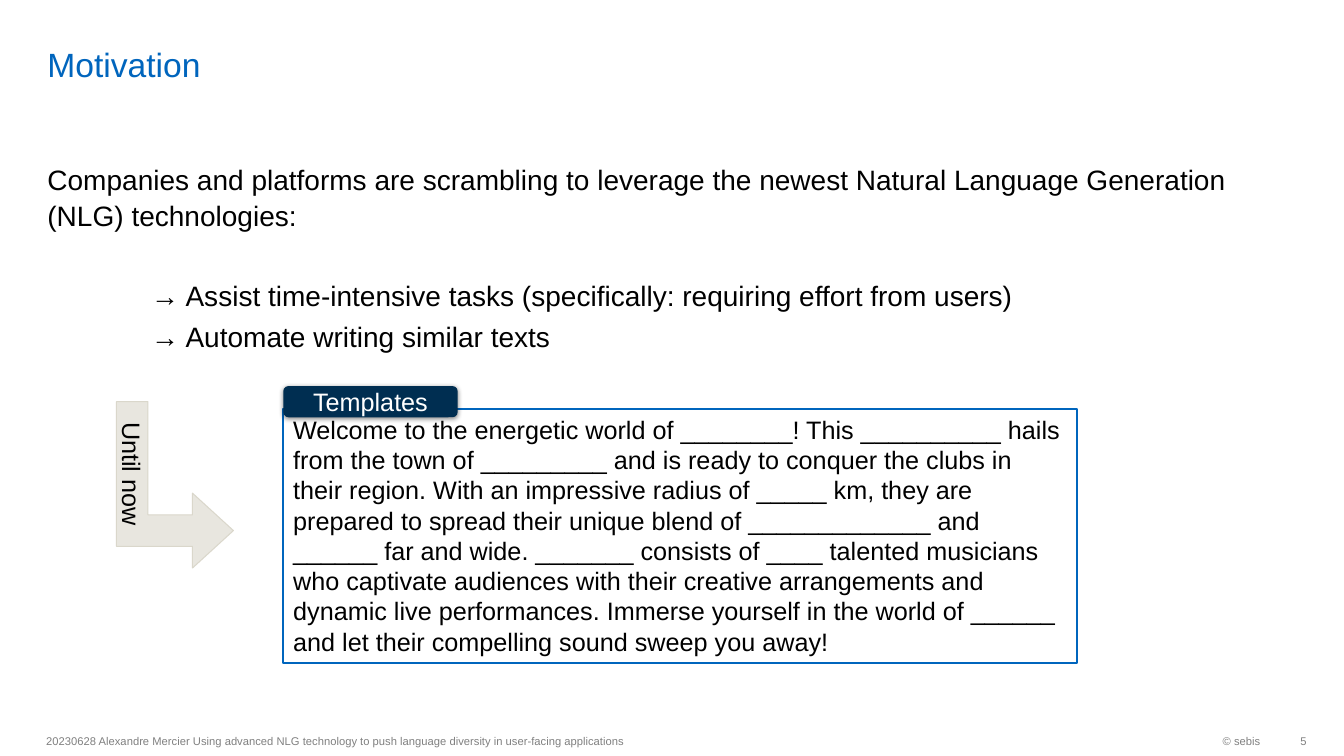
from lxml import etree
from pptx import Presentation
from pptx.dml.color import RGBColor
from pptx.enum.shapes import MSO_SHAPE
from pptx.enum.text import MSO_ANCHOR, MSO_AUTO_SIZE, PP_ALIGN
from pptx.oxml.ns import qn
from pptx.util import Inches, Pt

LEFT, CENTER, RIGHT = PP_ALIGN.LEFT, PP_ALIGN.CENTER, PP_ALIGN.RIGHT
TOP, MIDDLE, BOTTOM = MSO_ANCHOR.TOP, MSO_ANCHOR.MIDDLE, MSO_ANCHOR.BOTTOM
NO_AUTOFIT = MSO_AUTO_SIZE.NONE

TITLE = "Motivation"
# text, left indent in inches, space before in points
BODY = [
    ("Companies and platforms are scrambling to leverage the newest "
     "Natural Language Generation (NLG) technologies:", 0, 0),
    ("→ Assist time-intensive tasks (specifically: requiring effort from users)", 1.03, 32),
    ("→ Automate writing similar texts", 1.03, 4),
]
ARROW_LABEL = "Until now"
TEMPLATE_LABEL = "Templates"
TEMPLATE_TEXT = (
    "Welcome to the energetic world of ________! This __________ hails from the "
    "town of _________ and is ready to conquer the clubs in their region. With an "
    "impressive radius of _____ km, they are prepared to spread their unique blend "
    "of _____________ and ______ far and wide. _______ consists of ____ talented "
    "musicians who captivate audiences with their creative arrangements and dynamic "
    "live performances. Immerse yourself in the world of ______ and let their "
    "compelling sound sweep you away!"
)
WIDTH, HEIGHT = 13.33, 7.5
MARGIN = 0.37
FOOTER_TOP, FOOTER_HEIGHT = 7.19, 0.32
NUMBER_LEFT = WIDTH - 2 * MARGIN + 0.01
# text, left, width, alignment, right inset
FOOTERS = [
    ("20230628 Alexandre Mercier Using advanced NLG technology to push language "
     "diversity in user-facing applications", MARGIN - 0.01, 6.3, LEFT, 0.1),
    ("© sebis", NUMBER_LEFT - 2.34, 2.34, RIGHT, 0.1),
    ("5", NUMBER_LEFT, 0.36, RIGHT, 0),
]
BLUE, NAVY, BLACK, WHITE, GRAY = "0065BD", "002E51", "000000", "FFFFFF", "808080"
SAND, SAND_EDGE = "E8E6DF", "DAD7CB"


def color(value):
    return RGBColor.from_string(value)


def place(shape, left, top, width, height):
    shape.left, shape.top = Inches(left), Inches(top)
    shape.width, shape.height = Inches(width), Inches(height)


def write(shape, text, size, ink, align=LEFT, anchor=MIDDLE):
    """Put text in the shape and format each of its paragraphs."""
    frame = shape.text_frame
    frame.text = text
    frame.word_wrap = True
    frame.auto_size = NO_AUTOFIT
    frame.vertical_anchor = anchor
    for para in frame.paragraphs:
        para.alignment = align
        for span in para.runs:
            span.font.name = "Arial"
            span.font.size = Pt(size)
            span.font.color.rgb = color(ink)
    return frame


def add_box(slide, preset, bounds, fill=None, edge=None, edge_width=0.75):
    box = slide.shapes.add_shape(preset, 0, 0, 0, 0)
    place(box, *bounds)
    box.shadow.inherit = False
    if fill:
        box.fill.solid()
        box.fill.fore_color.rgb = color(fill)
    else:
        box.fill.background()
    if edge:
        box.line.color.rgb = color(edge)
        box.line.width = Pt(edge_width)
    else:
        box.line.fill.background()
    return box


def add_drop_shadow(shape, blur, distance, opacity):
    effects = shape._element.spPr.find(qn("a:effectLst"))
    shadow = etree.SubElement(
        effects, qn("a:outerShdw"), blurRad=str(Pt(blur)), dist=str(Pt(distance)),
        dir="5400000", rotWithShape="0")
    ink = etree.SubElement(shadow, qn("a:srgbClr"), val=BLACK)
    etree.SubElement(ink, qn("a:alpha"), val=str(opacity * 1000))


def add_body(slide):
    body = slide.placeholders[1]
    place(body, MARGIN, 1.55, WIDTH - 2 * MARGIN, 1.97)
    frame = write(body, "\n".join(text for text, _, _ in BODY), 20, BLACK, anchor=TOP)
    for para, (_, indent, before) in zip(frame.paragraphs, BODY):
        properties = para._p.get_or_add_pPr()
        properties.set("marL", str(Inches(indent)))
        properties.set("indent", "0")
        etree.SubElement(properties, qn("a:buNone"))
        para.line_spacing = 1.05
        para.space_before = Pt(before)


def main():
    deck = Presentation()
    deck.slide_width, deck.slide_height = Inches(WIDTH), Inches(HEIGHT)
    slide = deck.slides.add_slide(deck.slide_layouts[1])

    title = slide.shapes.title
    place(title, MARGIN, 0.05, 11.58, 0.79)
    frame = write(title, TITLE, 24, BLUE, anchor=BOTTOM)
    frame.margin_top = frame.margin_bottom = 0
    add_body(slide)

    for text, left, width, align, inset in FOOTERS:
        box = slide.shapes.add_textbox(0, 0, 0, 0)
        place(box, left, FOOTER_TOP, width, FOOTER_HEIGHT)
        write(box, text, 8, GRAY, align).margin_right = Inches(inset)

    arrow = add_box(slide, MSO_SHAPE.BENT_UP_ARROW, (0.91, 4.23, 1.65, 1.16), SAND, SAND_EDGE)
    arrow.rotation = 90
    for index, share in enumerate((0.269, 0.32, 0.35)):
        arrow.adjustments[index] = share
    write(arrow, ARROW_LABEL, 18, BLACK, CENTER)

    template = add_box(slide, MSO_SHAPE.RECTANGLE, (2.81, 4.06, 7.87, 2.52),
                       edge=BLUE, edge_width=1.5)
    write(template, TEMPLATE_TEXT, 18, BLACK, anchor=TOP)

    label = add_box(slide, MSO_SHAPE.ROUNDED_RECTANGLE, (2.81, 3.83, 1.73, 0.31), NAVY)
    add_drop_shadow(label, blur=3.5, distance=1.1, opacity=45)
    write(label, TEMPLATE_LABEL, 18, WHITE, CENTER)

    deck.save("out.pptx")


if __name__ == "__main__":
    main()
